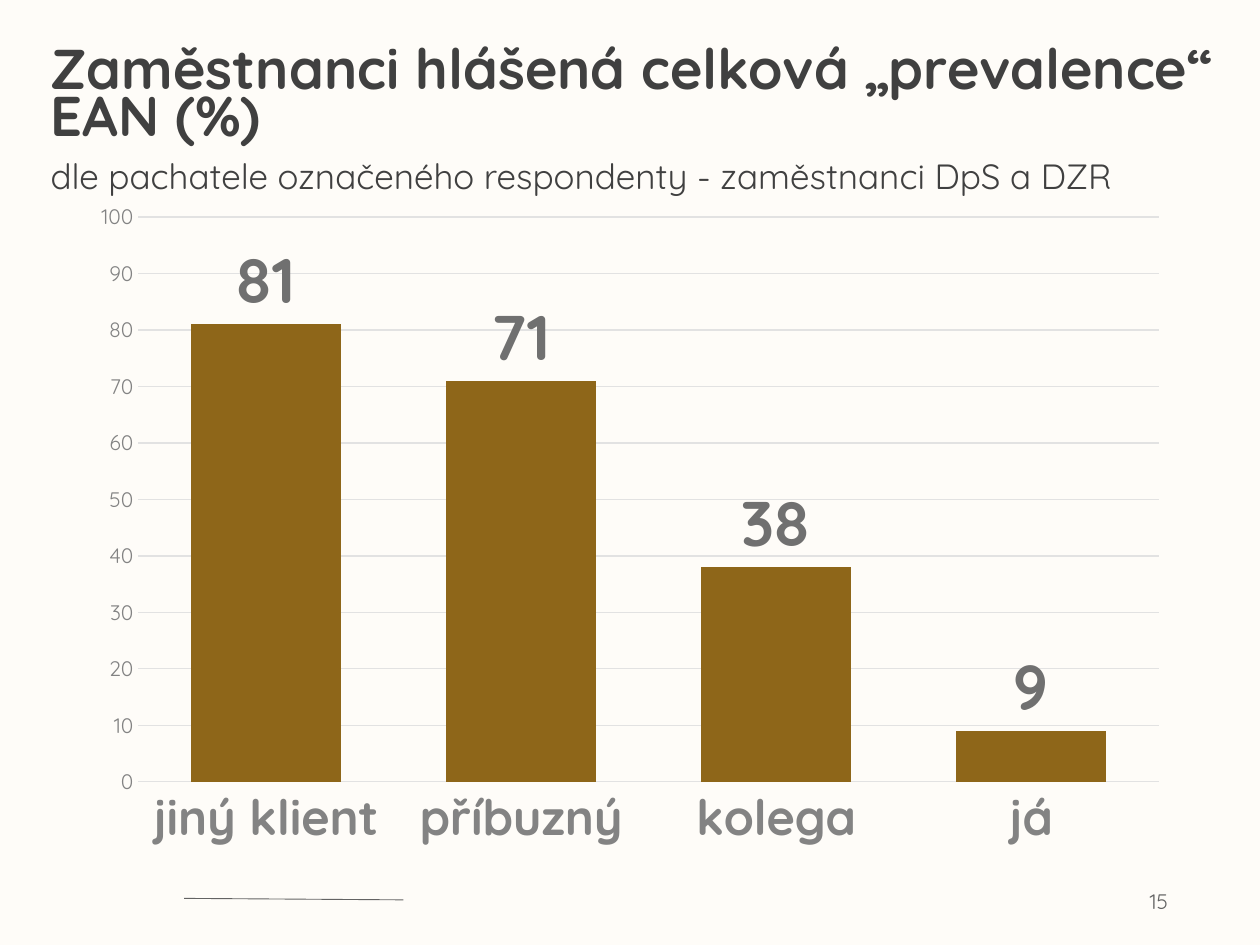
from dataclasses import dataclass

from lxml import etree
from pptx import Presentation
from pptx.chart.data import CategoryChartData
from pptx.dml.color import RGBColor
from pptx.enum.chart import XL_CHART_TYPE, XL_LABEL_POSITION, XL_TICK_MARK
from pptx.enum.shapes import MSO_CONNECTOR
from pptx.enum.text import MSO_ANCHOR, MSO_AUTO_SIZE, PP_ALIGN
from pptx.oxml.ns import qn
from pptx.util import Cm, Pt

COLUMNS = XL_CHART_TYPE.COLUMN_CLUSTERED
OUTSIDE_END = XL_LABEL_POSITION.OUTSIDE_END
NO_TICK = XL_TICK_MARK.NONE
STRAIGHT = MSO_CONNECTOR.STRAIGHT
TOP, MIDDLE = MSO_ANCHOR.TOP, MSO_ANCHOR.MIDDLE
LEFT, RIGHT = PP_ALIGN.LEFT, PP_ALIGN.RIGHT
NO_AUTOFIT = MSO_AUTO_SIZE.NONE
TITLE_ONLY = 5


@dataclass(frozen=True)
class Theme:
    font: str = "Quicksand"
    background: str = "FEFCF8"
    text: str = "404040"
    footer: str = "636363"
    axis: str = "838383"
    label: str = "707070"
    grid: str = "E2E2E2"
    bar: str = "8E6619"
    title_size: int = 32
    subtitle_size: int = 20
    value_size: int = 36
    category_size: int = 28
    small_size: int = 12
    chart_size: int = 10


THEME = Theme()


def set_all(target, values):
    for name, value in values.items():
        setattr(target, name, value)


def style_font(font, size, color, bold=False):
    set_all(font, {"name": THEME.font, "size": Pt(size), "bold": bold})
    font.color.rgb = RGBColor.from_string(color)


def style_line(line, color, width):
    line.color.rgb = RGBColor.from_string(color)
    line.width = Pt(width)


def place(box, left, top, width, height):
    set_all(box, {"left": Cm(left), "top": Cm(top),
                  "width": Cm(width), "height": Cm(height)})


def write_span(para, text, size, color, bold=False):
    span = para.add_run()
    span.text = text
    style_font(span.font, size, color, bold)


def add_heading(page, title, subtitle):
    box = page.shapes.title
    place(box, 1.02, 1.04, 24.38, 3.05)
    frame = box.text_frame
    set_all(frame, {"margin_left": 0, "margin_top": 0, "margin_right": 0,
                    "margin_bottom": 0, "vertical_anchor": TOP,
                    "word_wrap": True, "auto_size": NO_AUTOFIT})
    first, second = frame.paragraphs[0], frame.add_paragraph()
    set_all(first, {"alignment": LEFT, "line_spacing": 0.7, "space_before": Pt(0)})
    set_all(second, {"alignment": LEFT, "line_spacing": 0.9, "space_before": Pt(7.5)})
    write_span(first, title, THEME.title_size, THEME.text, bold=True)
    write_span(second, subtitle, THEME.subtitle_size, THEME.text)


def style_axis(axis, size, bold=False):
    set_all(axis, {"major_tick_mark": NO_TICK, "minor_tick_mark": NO_TICK})
    style_font(axis.tick_labels.font, size, THEME.axis, bold)


def add_column_chart(page, categories, values):
    data = CategoryChartData(number_format="General")
    data.categories = categories
    data.add_series("Series 1", values)
    chart = page.shapes.add_chart(
        COLUMNS, Cm(1.6), Cm(3.84), Cm(22.2), Cm(13.51), data).chart
    set_all(chart, {"has_legend": False, "has_title": False})
    style_font(chart.font, THEME.chart_size, THEME.text)

    # Axes and gridlines
    style_axis(chart.category_axis, THEME.category_size, bold=True)
    style_line(chart.category_axis.format.line, THEME.grid, 0.75)
    value_axis = chart.value_axis
    style_axis(value_axis, THEME.small_size)
    set_all(value_axis, {"minimum_scale": 0, "maximum_scale": 100, "major_unit": 10,
                         "has_major_gridlines": True})
    value_axis.format.line.fill.background()
    style_line(value_axis.major_gridlines.format.line, THEME.grid, 0.75)

    # Columns and their value labels
    plot = chart.plots[0]
    set_all(plot, {"gap_width": 70, "overlap": -27, "vary_by_categories": False})
    series = plot.series[0]
    series.format.fill.solid()
    series.format.fill.fore_color.rgb = RGBColor.from_string(THEME.bar)
    labels = series.data_labels
    set_all(labels, {"show_value": True, "position": OUTSIDE_END})
    style_font(labels.font, THEME.value_size, THEME.label, bold=True)


def add_footer(page, number):
    rule = page.shapes.add_connector(STRAIGHT, Cm(3.71), Cm(18.11), Cm(8.13), Cm(18.14))
    style_line(rule.line, THEME.footer, 0.5)
    etree.SubElement(rule.element.spPr, qn("a:effectLst"))

    box = page.shapes.add_textbox(Cm(18.08), Cm(17.65), Cm(5.72), Cm(1.02))
    set_all(box.text_frame, {"word_wrap": True, "vertical_anchor": MIDDLE})
    para = box.text_frame.paragraphs[0]
    para.alignment = RIGHT
    write_span(para, number, THEME.small_size, THEME.footer)


def main():
    deck = Presentation()
    set_all(deck, {"slide_width": Cm(25.4), "slide_height": Cm(19.05)})
    page = deck.slides.add_slide(deck.slide_layouts[TITLE_ONLY])
    page.background.fill.solid()
    page.background.fill.fore_color.rgb = RGBColor.from_string(THEME.background)

    add_footer(page, "15")
    add_column_chart(page, ["jiný klient", "příbuzný", "kolega", "já"], [81, 71, 38, 9])
    add_heading(page, "Zaměstnanci hlášená celková „prevalence“ EAN (%)",
                "dle pachatele označeného respondenty - zaměstnanci DpS a DZR")
    deck.save("out.pptx")


if __name__ == "__main__":
    main()
